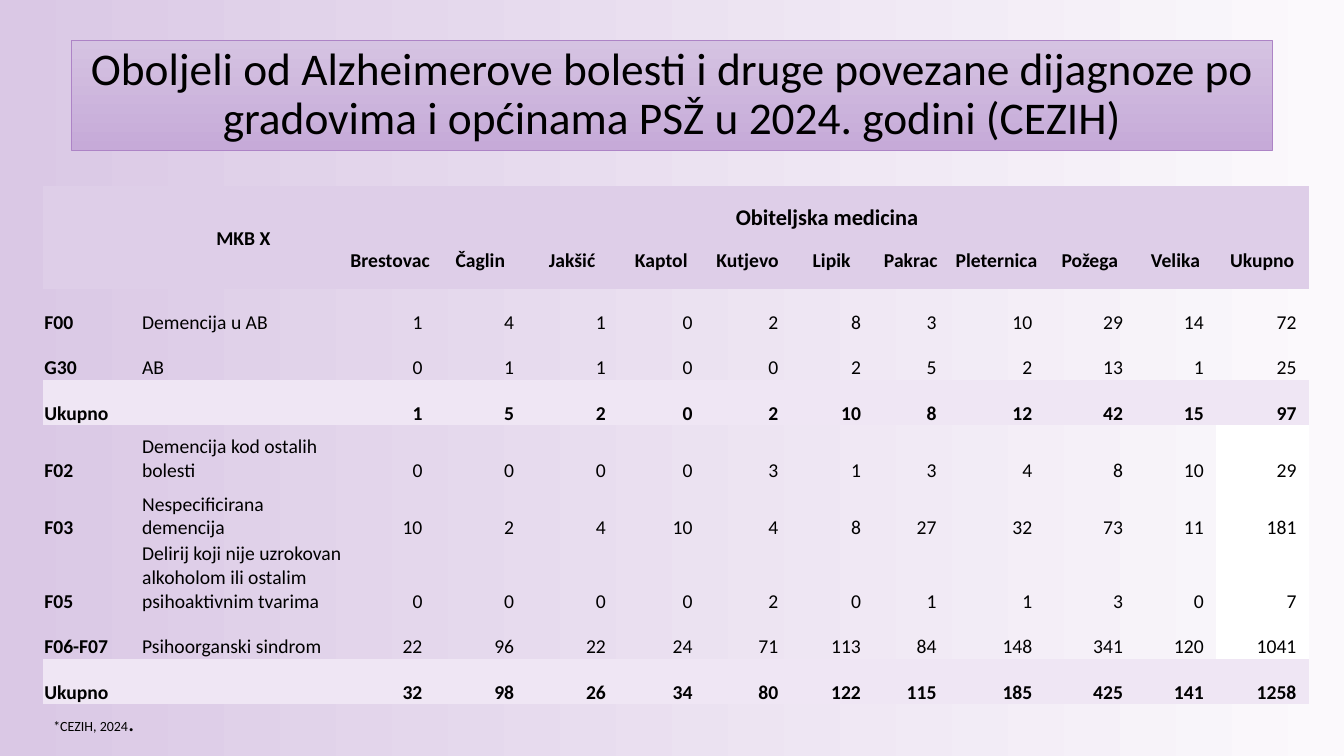
from pptx import Presentation, util as u
from pptx.dml.color import RGBColor
from pptx.enum import text

COLORS = {
    "text": "000000", "header": "DECEE8", "total": "EFE6F4", "white": "FFFFFF",
    "left": "DAC8E5", "right": "FBF9FC",
    "title_top": "D5C3E2", "title_bottom": "C6AAD8", "title_line": "AD84C6",
}
LEFT, TABLE_TOP = 0.43, 1.85
COLUMNS = [0.97, 2.03, 0.88, 0.91, 0.91, 0.86, 0.85, 0.82, 0.75, 0.95, 0.9, 0.8, 0.92]
ROWS = [0.45, 0.57, 0.45, 0.45, 0.45, 0.57, 0.57, 0.73, 0.45, 0.45]
TOWNS = ["Brestovac", "Čaglin", "Jakšić", "Kaptol", "Kutjevo", "Lipik", "Pakrac",
         "Pleternica", "Požega", "Velika", "Ukupno"]
DIAGNOSES = [
    ("F00", "Demencija u AB", [1, 4, 1, 0, 2, 8, 3, 10, 29, 14, 72]),
    ("G30", "AB", [0, 1, 1, 0, 0, 2, 5, 2, 13, 1, 25]),
    ("Ukupno", "", [1, 5, 2, 0, 2, 10, 8, 12, 42, 15, 97]),
    ("F02", "Demencija kod ostalih bolesti", [0, 0, 0, 0, 3, 1, 3, 4, 8, 10, 29]),
    ("F03", "Nespecificirana demencija", [10, 2, 4, 10, 4, 8, 27, 32, 73, 11, 181]),
    ("F05", "Delirij koji nije uzrokovan alkoholom ili ostalim psihoaktivnim tvarima",
     [0, 0, 0, 0, 2, 0, 1, 1, 3, 0, 7]),
    ("F06-F07", "Psihoorganski sindrom",
     [22, 96, 22, 24, 71, 113, 84, 148, 341, 120, 1041]),
    ("Ukupno", "", [32, 98, 26, 34, 80, 122, 115, 185, 425, 141, 1258]),
]
NO_STYLE_NO_GRID = "{2D5ABB26-0587-4C30-8999-92F81FD0307C}"
LAST = len(COLUMNS) - 1


def add_run(paragraph, wording, size, bold=False):
    run = paragraph.add_run()
    run.text = wording
    for name, value in {"name": "Calibri", "size": u.Pt(size), "bold": bold}.items():
        setattr(run.font, name, value)
    run.font.color.rgb = RGBColor.from_string(COLORS["text"])


def set_gradient(fill, start, end, angle):
    fill.gradient()
    fill.gradient_angle = angle
    for stop, color in zip(fill.gradient_stops, (start, end)):
        stop.color.rgb = RGBColor.from_string(COLORS[color])


presentation = Presentation()
presentation.slide_width, presentation.slide_height = u.Inches(13.33), u.Inches(7.5)
slide = presentation.slides.add_slide(presentation.slide_layouts[5])
set_gradient(slide.background.fill, "left", "right", 0)

# Title
title = slide.shapes.title
for name, value in {"left": 0.71, "top": 0.4, "width": 11.91, "height": 1.09}.items():
    setattr(title, name, u.Inches(value))
set_gradient(title.fill, "title_top", "title_bottom", 270)
title.line.color.rgb = RGBColor.from_string(COLORS["title_line"])
title.line.width = u.Pt(0.5)
title.text_frame.auto_size = text.MSO_AUTO_SIZE.NONE
title.text_frame.vertical_anchor = text.MSO_ANCHOR.MIDDLE
paragraph = title.text_frame.paragraphs[0]
paragraph.alignment = text.PP_ALIGN.CENTER
paragraph.line_spacing = 0.9
add_run(paragraph, "Oboljeli od Alzheimerove bolesti i druge povezane dijagnoze po "
        "gradovima i općinama PSŽ u 2024. godini (CEZIH)", 32.4)

# Table
frame = slide.shapes.add_table(len(ROWS), len(COLUMNS), u.Inches(LEFT), u.Inches(TABLE_TOP),
                               u.Inches(sum(COLUMNS)), u.Inches(sum(ROWS)))
table = frame.table
table.first_row = table.horz_banding = False
frame.element.xpath(".//a:tableStyleId")[0].text = NO_STYLE_NO_GRID
for column, width in zip(table.columns, COLUMNS):
    column.width = u.Inches(width)
for row, height in zip(table.rows, ROWS):
    row.height = u.Inches(height)

grid = [["", "MKB X", "Obiteljska medicina"] + [""] * (LAST - 2), ["", ""] + TOWNS]
grid += [[code, name, *counts] for code, name, counts in DIAGNOSES]
for r, row in enumerate(grid):
    is_header, is_total = r < 2, row[0] == "Ukupno"
    for c, value in enumerate(row):
        cell = table.cell(r, c)
        is_count = not is_header and c >= 2
        margins = {"left": 0.01, "top": 0.01, "right": 0.12 if is_count else 0.01, "bottom": 0}
        for side, margin in margins.items():
            setattr(cell, f"margin_{side}", u.Inches(margin))

        color = "header" if is_header else "total" if is_total else None
        if c == LAST and r >= 5 and not is_total:
            color = "white"
        if color:
            cell.fill.solid()
            cell.fill.fore_color.rgb = RGBColor.from_string(COLORS[color])
        else:
            cell.fill.background()

        if value == "":
            continue
        is_group = (r, c) == (0, 2)
        cell.vertical_anchor = (text.MSO_ANCHOR.MIDDLE if is_header and not is_group
                                else text.MSO_ANCHOR.BOTTOM)
        paragraph = cell.text_frame.paragraphs[0]
        paragraph.alignment = (text.PP_ALIGN.CENTER if is_header else
                               text.PP_ALIGN.RIGHT if is_count else text.PP_ALIGN.LEFT)
        add_run(paragraph, str(value), 16 if is_group else 14,
                bold=is_header or is_total or c == 0)
for first, last in [((0, 0), (1, 0)), ((0, 1), (1, 1)), ((0, 2), (0, LAST))]:
    table.cell(*first).merge(table.cell(*last))

# Source note
note = slide.shapes.add_textbox(u.Inches(LEFT), u.Inches(6.96), u.Inches(1.91), u.Inches(0.4))
note.text_frame.word_wrap = True
add_run(note.text_frame.paragraphs[0], "*CEZIH, 2024", 10)
add_run(note.text_frame.paragraphs[0], ".", 18)

presentation.save("out.pptx")
